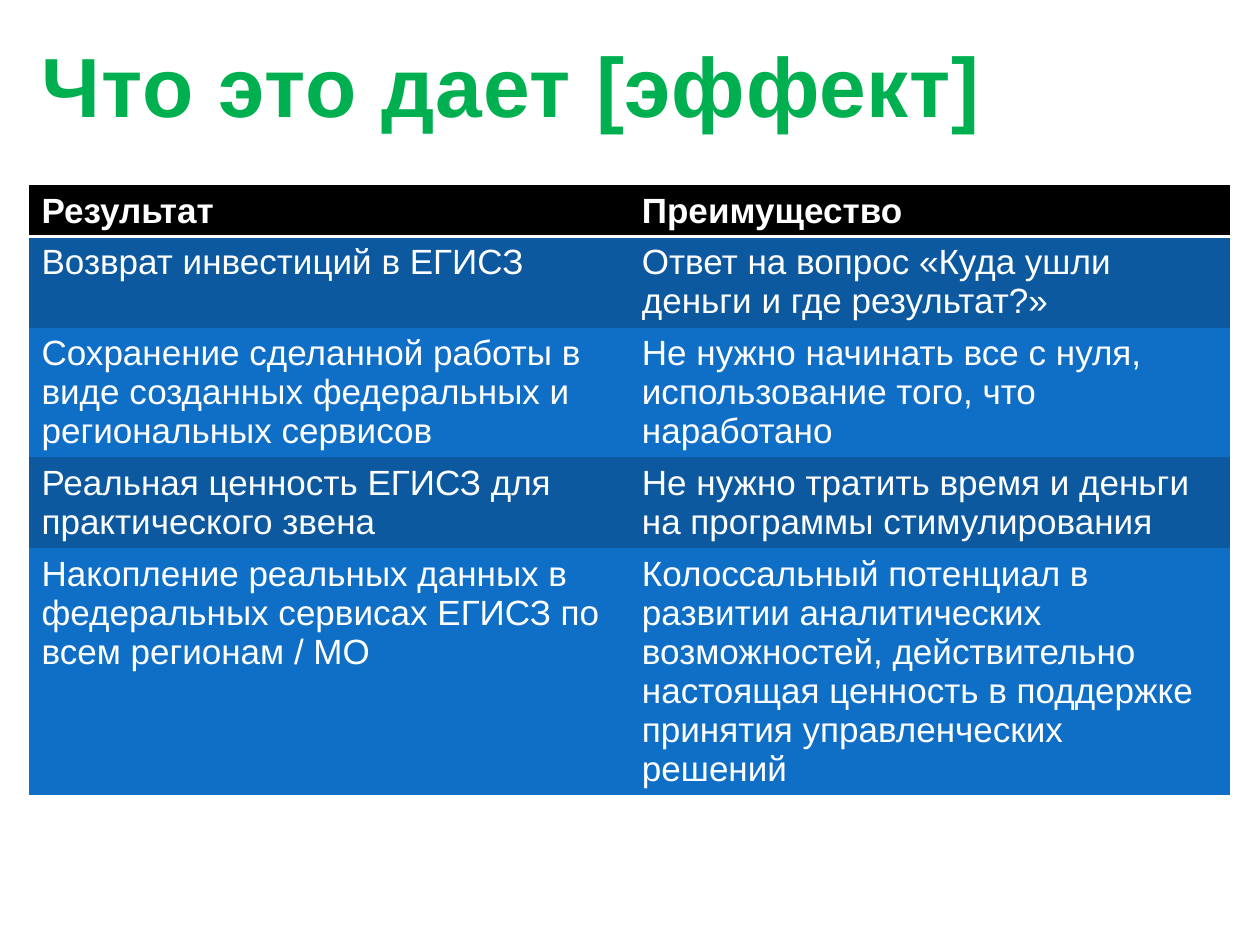
from lxml import etree
from pptx import Presentation
from pptx.dml.color import RGBColor
from pptx.enum import text
from pptx.oxml.ns import qn
from pptx.util import Inches, Pt

COLORS = {
    "title": "00B050",
    "outline": "A6A6A6",
    "header": "000000",
    "dark_row": "0C599F",
    "light_row": "0F6FC6",
    "white": "FFFFFF",
}
PLAIN_TABLE_STYLE = "{2D5ABB26-0587-4C30-8999-92F81FD0307C}"
LEFT, WIDTH = Inches(0.23), Inches(9.53)

HEADINGS = ("Результат", "Преимущество")
EFFECTS = [
    ("Возврат инвестиций в ЕГИСЗ",
     "Ответ на вопрос «Куда ушли деньги и где результат?»"),
    ("Сохранение сделанной работы в виде созданных федеральных и региональных сервисов",
     "Не нужно начинать все с нуля, использование того, что наработано"),
    ("Реальная ценность ЕГИСЗ для практического звена",
     "Не нужно тратить время и деньги на программы стимулирования"),
    ("Накопление реальных данных в федеральных сервисах ЕГИСЗ по всем регионам / МО",
     "Колоссальный потенциал в развитии аналитических возможностей, "
     "действительно настоящая ценность в поддержке принятия управленческих решений"),
]


class SlideBuilder:
    font_name = "Arial"

    def __init__(self, slide):
        self.slide = slide

    def style(self, paragraph, size, color, bold):
        font = paragraph.font
        font.name, font.size, font.bold = self.font_name, Pt(size), bold
        font.color.rgb = RGBColor.from_string(COLORS[color])

    def line(self, parent, tag, width, color):
        """Put a solid line element first in the parent's properties."""
        line = etree.Element(qn(tag), w=str(Pt(width)))
        fill = etree.SubElement(line, qn("a:solidFill"))
        etree.SubElement(fill, qn("a:srgbClr"), val=COLORS[color])
        parent.insert(0, line)

    def title(self, wording, top, height):
        heading = self.slide.shapes.title
        heading.left, heading.top = LEFT, top
        heading.width, heading.height = WIDTH, height
        frame = heading.text_frame
        frame.text = wording
        frame.word_wrap = True
        frame.vertical_anchor = text.MSO_ANCHOR.MIDDLE
        paragraph = frame.paragraphs[0]
        paragraph.alignment = text.PP_ALIGN.LEFT
        self.style(paragraph, 48, "title", True)
        # Letter spacing and outline
        properties = paragraph.runs[0].font._element
        properties.set("spc", "50")
        self.line(properties, "a:ln", 0.9, "outline")

    def cell(self, cell, wording, fill, bold):
        cell.text = wording
        cell.fill.solid()
        cell.fill.fore_color.rgb = RGBColor.from_string(COLORS[fill])
        self.style(cell.text_frame.paragraphs[0], 20, "white", bold)

    def table(self, headings, rows, top, height, row_height):
        frame = self.slide.shapes.add_table(
            len(rows) + 1, len(headings), LEFT, top, WIDTH, height)
        table = frame.table
        table._tbl.tblPr.find(qn("a:tableStyleId")).text = PLAIN_TABLE_STYLE
        # Rows grow with their text from one shared minimum
        for row in table.rows:
            row.height = row_height
        frame.height = height

        # Header with a white rule below
        for column, wording in enumerate(headings):
            cell = table.cell(0, column)
            self.cell(cell, wording, "header", True)
            self.line(cell._tc.get_or_add_tcPr(), "a:lnB", 2, "white")

        # Body in alternating bands
        for number, row in enumerate(rows, start=1):
            fill = "dark_row" if number % 2 else "light_row"
            for column, wording in enumerate(row):
                self.cell(table.cell(number, column), wording, fill, False)
        return table


def main():
    deck = Presentation()
    deck.slide_width, deck.slide_height = Inches(10), Inches(7.5)
    builder = SlideBuilder(deck.slides.add_slide(deck.slide_layouts[5]))

    builder.title("Что это дает [эффект]", Inches(0.16), Inches(1.02))
    effects = builder.table(
        HEADINGS, EFFECTS, Inches(1.47), Inches(4.83), Inches(0.41))
    effects.cell(2, 1).vertical_anchor = text.MSO_ANCHOR.MIDDLE

    deck.save("out.pptx")


if __name__ == "__main__":
    main()
